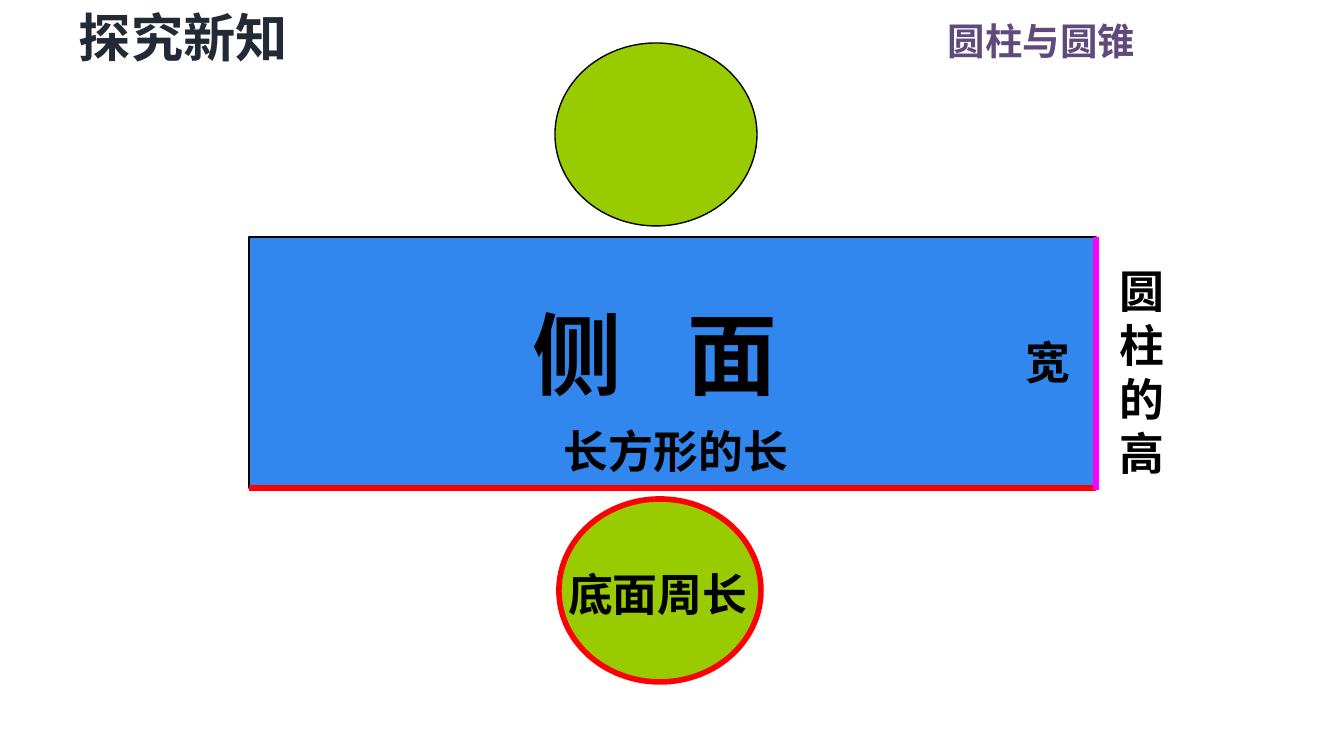
import pptx
import pptx.util
import pptx.dml.color
import pptx.enum.shapes
import pptx.enum.text
import pptx.oxml
import pptx.oxml.ns

RGB = pptx.dml.color.RGBColor
BLACK = RGB(0x00, 0x00, 0x00)
GREEN = RGB(0x99, 0xCC, 0x00)
BLUE = RGB(0x32, 0x87, 0xEE)
RED = RGB(0xFF, 0x00, 0x00)
PINK = RGB(0xFF, 0x00, 0xFF)
PURPLE = RGB(0x60, 0x4A, 0x7B)
SLATE = RGB(0x22, 0x2A, 0x35)

SANS = "Noto Sans CJK SC"
SERIF = "Times New Roman"
OVAL = pptx.enum.shapes.MSO_SHAPE.OVAL
RECT = pptx.enum.shapes.MSO_SHAPE.RECTANGLE
LEFT = pptx.enum.text.PP_ALIGN.LEFT
RIGHT = pptx.enum.text.PP_ALIGN.RIGHT
SCALE = 914400 / 134.4  # EMU in one px


def px(*sizes):
    return [pptx.util.Emu(round(size * SCALE)) for size in sizes]


def add_form(slide, kind, box, fill, color=BLACK, width=0.75):
    form = slide.shapes.add_shape(kind, *px(*box))
    form.shadow.inherit = False
    if fill is None:
        form.fill.background()
    else:
        form.fill.solid()
        form.fill.fore_color.rgb = fill
    form.line.color.rgb = color
    form.line.width = pptx.util.Pt(width)


def add_edge(slide, ends, color):
    edge = slide.shapes.add_connector(
        pptx.enum.shapes.MSO_CONNECTOR.STRAIGHT, *px(*ends))
    edge.line.color.rgb = color
    edge.line.width = pptx.util.Pt(3)
    pptx.oxml.ns.qn("a:effectLst")
    edge._element.spPr.append(pptx.oxml.parse_xml(
        "<a:effectLst %s/>" % pptx.oxml.ns.nsdecls("a")))


def add_run(para, text, size, color, font, gap=0):
    run = para.add_run()
    run.text = text
    run.font.size = pptx.util.Pt(size)
    run.font.bold = True
    run.font.color.rgb = color
    run.font.name = font
    props = run.font._element
    props.find(pptx.oxml.ns.qn("a:latin")).addnext(pptx.oxml.parse_xml(
        '<a:ea %s typeface="%s"/>' % (pptx.oxml.ns.nsdecls("a"), SANS)))
    if gap:
        props.set("spc", str(gap * 100))


def add_text(slide, box, pieces, size=24, color=BLACK, font=SANS,
             align=LEFT, wrap=False, inset=(13, 7)):
    frame = slide.shapes.add_textbox(*px(*box)).text_frame
    frame.word_wrap = wrap
    side, top = px(*inset)
    frame.margin_left = frame.margin_right = side
    frame.margin_top = frame.margin_bottom = top
    para = frame.paragraphs[0]
    para.alignment = align
    for text, gap in pieces:
        add_run(para, text, size, color, font, gap)


def main():
    deck = pptx.Presentation()
    deck.slide_width, deck.slide_height = px(1344, 756)
    slide = deck.slides.add_slide(deck.slide_layouts[6])

    # Headings
    add_text(slide, (915, 11, 233, 59), [("圆柱与圆锥", 0)], 20, PURPLE,
             align=RIGHT, wrap=True)
    add_text(slide, (69, 0, 271, 74), [("探究新知", 0)], 28, SLATE,
             wrap=True, inset=(10, 5))

    # Unrolled cylinder: two bases and the side
    left, top, right, bottom = 249, 237, 1096, 488
    base = (559, 499, 202, 183)
    add_form(slide, OVAL, (555, 43, 202, 183), GREEN)
    add_form(slide, RECT, (left, top, right - left, bottom - top), BLUE)
    add_form(slide, OVAL, base, GREEN)

    # Side name, with a widened space between its letters
    add_text(slide, (520, 292, 277, 122),
             [("侧", 0), (" ", 24), ("面", 0)], 48, font=SERIF)

    # Base rim and the matching length
    add_form(slide, OVAL, base, None, RED, 3)
    add_text(slide, (551, 417, 254, 69), [("长方形的长", 0)])
    add_edge(slide, (left, bottom, right, bottom), RED)
    add_text(slide, (555, 560, 208, 69), [("底面周长", 0)])

    # Width and the matching height
    add_text(slide, (1012, 328, 63, 69), [("宽", 0)], wrap=True)
    add_edge(slide, (right, top, right, bottom + 2), PINK)
    add_text(slide, (1107, 257, 71, 231), [("圆柱的高", 0)], wrap=True)

    deck.save("out.pptx")


if __name__ == "__main__":
    main()
